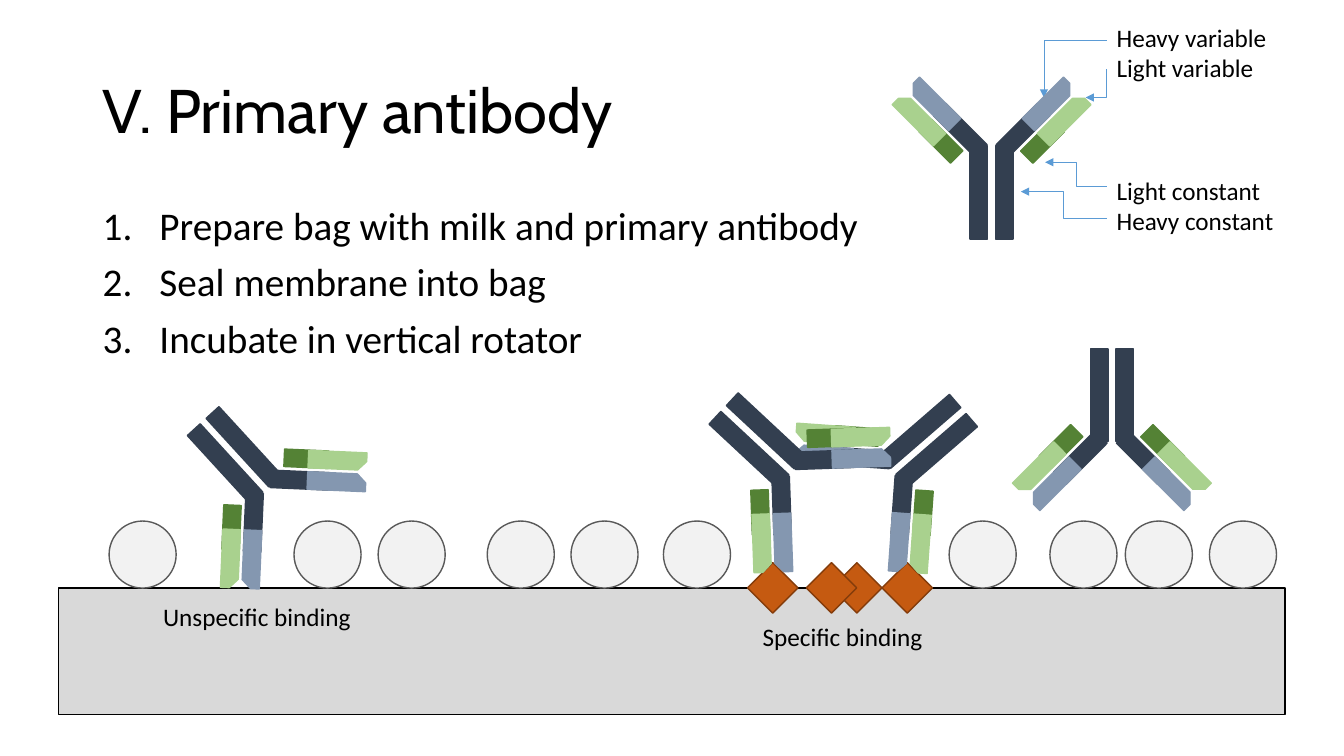
from math import cos, radians, sin

from lxml.etree import SubElement
from pptx import Presentation
from pptx.dml.color import RGBColor
from pptx.enum.shapes import MSO_CONNECTOR, MSO_SHAPE
from pptx.enum.text import MSO_ANCHOR
from pptx.oxml.ns import qn
from pptx.util import Cm, Pt

COLORS = {
    "text": "000000", "arrow": "5B9BD5",
    "heavy constant": "333F50", "heavy variable": "8497B0",
    "light constant": "548235", "light variable": "A9D18E",
    "membrane": "D9D9D9", "membrane edge": "000000",
    "antigen": "C55A11", "antigen edge": "843C0B",
    "milk": "F2F2F2", "milk edge": "595959",
}

prs = Presentation()
prs.slide_width, prs.slide_height = Cm(33.87), Cm(19.05)
slide = prs.slides.add_slide(prs.slide_layouts[6])


def add_text(lines, left, top, width, height, size, font="Calibri", wrap=False):
    frame = slide.shapes.add_textbox(Cm(left), Cm(top), Cm(width), Cm(height)).text_frame
    frame.word_wrap = wrap
    frame.text = "\n".join(lines)
    for paragraph in frame.paragraphs:
        paragraph.font.size = Pt(size)
        paragraph.font.name = font
        paragraph.font.color.rgb = RGBColor.from_string(COLORS["text"])
    return frame


def add_part(kind, left, top, width, height, fill, edge):
    part = slide.shapes.add_shape(kind, Cm(left), Cm(top), Cm(width), Cm(height))
    part.shadow.inherit = False
    part.fill.solid()
    part.fill.fore_color.rgb = RGBColor.from_string(COLORS[fill])
    part.line.color.rgb = RGBColor.from_string(COLORS[edge])
    part.line.width = Pt(1)
    return part


title = add_text(["V. Primary antibody"], 2.34, 1.02, 29.21, 3.68, 44, "Cabin", True)
title.vertical_anchor = MSO_ANCHOR.MIDDLE
title.paragraphs[0].line_spacing = 0.9

steps = add_text(
    ["Prepare bag with milk and primary antibody", "Seal membrane into bag",
     "Incubate in vertical rotator"],
    2.34, 5.08, 29.21, 12.09, 28, wrap=True)
for step in steps.paragraphs:
    step.line_spacing = 0.9
    step.space_before = Pt(10)
    properties = step._p.get_or_add_pPr()
    properties.set("marL", str(Cm(1.43)))
    properties.set("indent", str(Cm(-1.43)))
    SubElement(properties, qn("a:buFont"), typeface="+mj-lt")
    SubElement(properties, qn("a:buAutoNum"), type="arabicPeriod")

add_part(MSO_SHAPE.RECTANGLE, 1.48, 14.82, 30.91, 3.18, "membrane", "membrane edge")
for left in (20.96, 22.23, 20.32, 18.84):
    add_part(MSO_SHAPE.DIAMOND, left, 14.18, 1.27, 1.27, "antigen", "antigen edge")
for left in (2.75, 7.41, 9.53, 12.28, 14.39, 16.72, 23.92, 26.46, 28.36, 30.48):
    add_part(MSO_SHAPE.OVAL, left, 13.13, 1.69, 1.69, "milk", "milk edge")

legend = add_text(
    ["Heavy variable", "Light variable", "Light constant", "Heavy constant"],
    27.89, 0.43, 4.5, 5.64, 18)
legend.paragraphs[2].space_before = Pt(66)

pointers = [
    ("bentConnector2", 27.89, 1.02, 26.31, 2.46, "a:tailEnd"),
    ("bentConnector2", 27.36, 2.46, 27.89, 1.73, "a:headEnd"),
    ("bentConnector3", 27.89, 4.7, 26.34, 4.09, "a:tailEnd"),
    ("bentConnector3", 27.89, 5.51, 25.73, 4.83, "a:tailEnd"),
]
for bend, x1, y1, x2, y2, arrow_end in pointers:
    pointer = slide.shapes.add_connector(
        MSO_CONNECTOR.ELBOW, Cm(x1), Cm(y1), Cm(x2), Cm(y2))
    pointer.line.color.rgb = RGBColor.from_string(COLORS["arrow"])
    pointer.line.width = Pt(0.5)
    outline = pointer._element.spPr
    outline.find(qn("a:prstGeom")).set("prst", bend)
    SubElement(outline.find(qn("a:ln")), qn(arrow_end), type="triangle")
    SubElement(outline, qn("a:effectLst"))

chain_width = 0.44
chains = [
    ("heavy constant", 0.32, 1.04, 2.34, 0),
    ("heavy constant", 0.79, -0.53, 1.47, 225),
    ("heavy variable", 1.45, -1.19, 1.47, 45),
    ("light constant", 1.28, -0.25, 1.12, 225),
    ("light variable", 1.83, -0.81, 1.47, 45),
]
antibodies = [
    (24.99, 3.81, 0), (22.61, 11.79, 229.1), (19.85, 11.8, 133),
    (28.02, 11, 180), (6.61, 12.24, 137.5),
]
for hinge_x, hinge_y, turn in antibodies:
    cosine, sine = cos(radians(turn)), sin(radians(turn))
    for side in (-1, 1):
        for chain, dx, dy, length, tilt in chains:
            x = hinge_x + side * dx * cosine - dy * sine
            y = hinge_y + side * dx * sine + dy * cosine
            variable = chain.endswith("variable")
            kind = MSO_SHAPE.SNIP_1_RECTANGLE if variable else MSO_SHAPE.RECTANGLE
            part = add_part(kind, x - chain_width / 2, y - length / 2,
                            chain_width, length, chain, chain)
            part.rotation = (turn + side * tilt) % 360
            if variable:
                part.adjustments[0] = 0.5
                if (side == -1) == chain.startswith("heavy"):
                    part._element.spPr.find(qn("a:xfrm")).set("flipH", "1")

add_text(["Specific binding"], 18.97, 15.52, 4.6, 1.02, 18)
add_text(["Unspecific binding"], 3.86, 15.04, 5.31, 1.02, 18)

prs.save("out.pptx")
